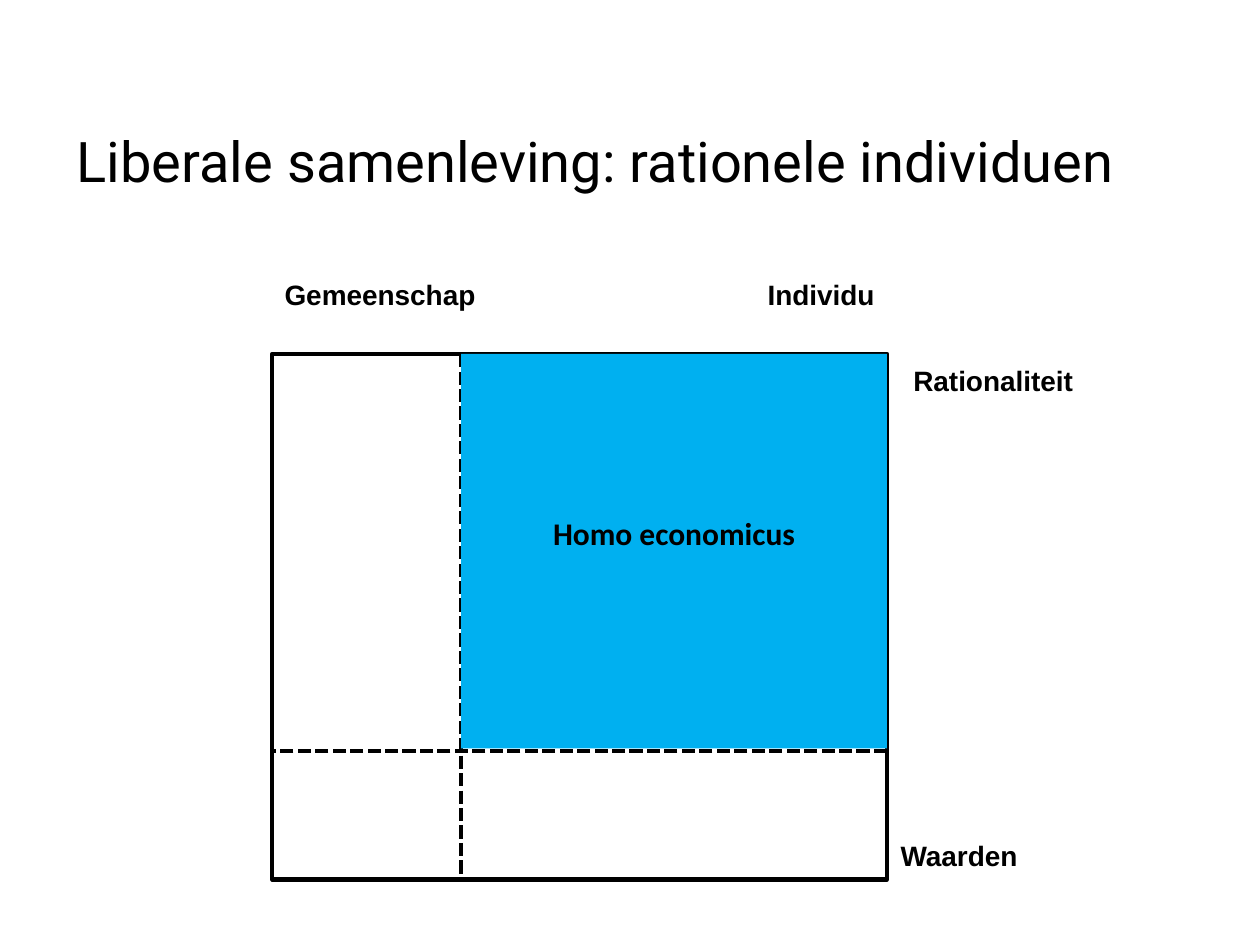
from dataclasses import dataclass

from lxml import etree
from pptx import Presentation
from pptx.dml.color import RGBColor
from pptx.enum.dml import MSO_LINE
from pptx.enum.shapes import MSO_CONNECTOR, MSO_SHAPE
from pptx.enum.text import MSO_ANCHOR, PP_ALIGN
from pptx.oxml.ns import qn
from pptx.util import Inches, Pt

LEFT, CENTER, RIGHT = PP_ALIGN.LEFT, PP_ALIGN.CENTER, PP_ALIGN.RIGHT
TOP, MIDDLE = MSO_ANCHOR.TOP, MSO_ANCHOR.MIDDLE
RECT, STRAIGHT, DASH = MSO_SHAPE.RECTANGLE, MSO_CONNECTOR.STRAIGHT, MSO_LINE.SQUARE_DOT
COLS, ROWS = 100, 75


@dataclass(frozen=True)
class Theme:
    ink: RGBColor = RGBColor(0x00, 0x00, 0x00)
    accent: RGBColor = RGBColor(0x00, 0xB0, 0xF0)
    title_font: str = "Roboto"
    label_font: str = "Arial"
    body_font: str = "Calibri"
    title_size: int = 32
    label_size: int = 16
    body_size: int = 18
    line_width: float = 2.5


class Deck:
    """Draws on the current slide, in units of a 100 by 75 grid."""

    def __init__(self, prs, theme):
        self.prs, self.theme = prs, theme
        self.s = prs.slides.add_slide(prs.slide_layouts[6])

    def at(self, x, y):
        return int(self.prs.slide_width * x / COLS), int(self.prs.slide_height * y / ROWS)

    def set_text(self, sp, text, font, size, bold=True, align=LEFT, anchor=TOP):
        tf = sp.text_frame
        tf.word_wrap = True
        tf.vertical_anchor = anchor
        tf.text = text
        p = tf.paragraphs[0]
        p.alignment = align
        f = p.runs[0].font
        f.name, f.size, f.bold = font, Pt(size), bold
        f.color.rgb = self.theme.ink

    def title(self, x, y, w, h, text):
        sp = self.s.shapes.add_textbox(*self.at(x, y), *self.at(w, h))
        self.set_text(sp, text, self.theme.title_font, self.theme.title_size,
                      bold=False, anchor=MIDDLE)

    def label(self, x, y, w, text, align=LEFT):
        sp = self.s.shapes.add_textbox(*self.at(x, y), *self.at(w, 3.7))
        self.set_text(sp, text, self.theme.label_font, self.theme.label_size, align=align)

    def frame(self, x, y, w, h):
        sp = self.s.shapes.add_shape(RECT, *self.at(x, y), *self.at(w, h))
        sp.shadow.inherit = False
        sp.fill.background()
        sp.line.color.rgb = self.theme.ink
        sp.line.width = Pt(self.theme.line_width)

    def block(self, x, y, w, h, text):
        sp = self.s.shapes.add_shape(RECT, *self.at(x, y), *self.at(w, h))
        sp.shadow.inherit = False
        sp.fill.solid()
        sp.fill.fore_color.rgb = self.theme.accent
        sp.line.fill.background()
        self.set_text(sp, text, self.theme.body_font, self.theme.body_size,
                      align=CENTER, anchor=MIDDLE)
        # The text sits slightly above the middle
        sp.text_frame.margin_bottom = Inches(0.34)

    def divider(self, x1, y1, x2, y2):
        ln = self.s.shapes.add_connector(STRAIGHT, *self.at(x1, y1), *self.at(x2, y2))
        ln.line.color.rgb = self.theme.ink
        ln.line.width = Pt(self.theme.line_width)
        ln.line.dash_style = DASH
        etree.SubElement(ln._element.spPr, qn("a:effectLst"))


def main():
    prs = Presentation()
    prs.slide_width, prs.slide_height = Inches(10), Inches(7.5)
    deck = Deck(prs, Theme())

    # Edges of the square and its two inner divisions
    left, split_x, right = 21.6, 36.6, 70.4
    top, split_y, bottom = 28.1, 59.6, 69.8

    deck.title(5.1, 7.6, 92.5, 10.2, "Liberale samenleving: rationele individuen")
    deck.frame(left, top, right - left, bottom - top)

    # Axis labels
    deck.label(left, 21.5, 19.5, "Gemeenschap")
    deck.label(right - 10.5, 21.5, 10.5, "Individu", RIGHT)
    deck.label(71.5, 28.4, 21.8, "Rationaliteit")
    deck.label(70.5, 66.1, 20, "Waarden")

    # Dashed divisions, then the highlighted quadrant
    deck.divider(split_x, top, split_x, bottom)
    deck.divider(right, split_y, left, split_y)
    deck.block(split_x, top, right - split_x, split_y - top - 0.2, "Homo economicus")

    prs.save("out.pptx")


if __name__ == "__main__":
    main()
